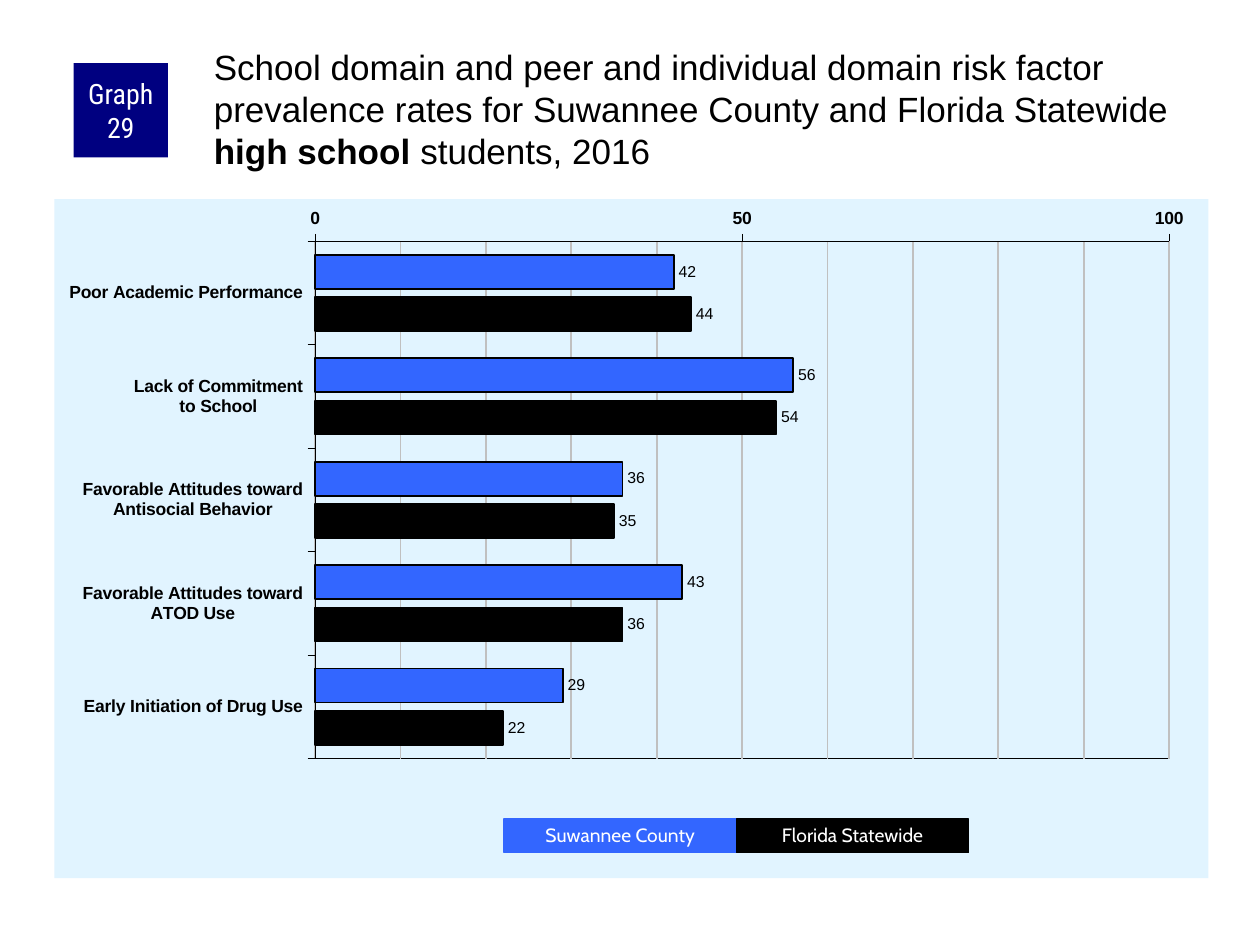
from copy import deepcopy
from lxml import etree
from pptx import Presentation
from pptx.chart.data import CategoryChartData as Data
from pptx.dml.color import RGBColor as RGB
from pptx.enum.chart import XL_AXIS_CROSSES as Cross
from pptx.enum.chart import XL_CHART_TYPE as Kind
from pptx.enum.chart import XL_LABEL_POSITION as Spot
from pptx.enum.chart import XL_TICK_LABEL_POSITION as Place
from pptx.enum.chart import XL_TICK_MARK as Tick
from pptx.enum.shapes import MSO_SHAPE as Form
from pptx.enum.text import MSO_ANCHOR as Anchor
from pptx.enum.text import PP_ALIGN as Align
from pptx.oxml import parse_xml
from pptx.oxml.ns import qn
from pptx.util import Pt

BLUE, BLACK, WHITE, NAVY = "3366FF", "000000", "FFFFFF", "000080"
PALE, GREY = "E1F4FF", "C0C0C0"
NS = ('xmlns:c="http://schemas.openxmlformats.org/drawingml/2006/chart" '
      'xmlns:a="http://schemas.openxmlformats.org/drawingml/2006/main"')

CATS = ["Poor Academic Performance", "Lack of Commitment\nto School",
        "Favorable Attitudes toward\nAntisocial Behavior",
        "Favorable Attitudes toward\nATOD Use", "Early Initiation of Drug Use"]
ROWS = [("Suwannee County", BLUE, [42, 56, 36, 43, 29]),
        ("Florida Statewide", BLACK, [44, 54, 35, 36, 22])]
TITLE = [("School domain and peer and individual domain risk factor prevalence "
          "rates for Suwannee County and Florida Statewide ", False),
         ("high school", True), (" students, 2016", False)]


def paint(fill, color):
    fill.solid()
    fill.fore_color.rgb = RGB.from_string(color)


def stroke(line, color, width):
    paint(line.fill, color)
    line.width = Pt(width)


def style(font, size, color, name="Arial", bold=False):
    font.size, font.name, font.bold = Pt(size), name, bold
    font.color.rgb = RGB.from_string(color)


def add_box(slide, text, area, color, size, face):
    box = slide.shapes.add_shape(Form.RECTANGLE, *map(Pt, area))
    box.shadow.inherit = False
    paint(box.fill, color)
    box.line.fill.background()
    frame = box.text_frame
    frame.word_wrap, frame.vertical_anchor = True, Anchor.MIDDLE
    frame.text = text
    par = frame.paragraphs[0]
    par.alignment = Align.CENTER
    style(par.runs[0].font, size, WHITE, face)
    return box


def add_badge(slide):
    box = add_box(slide, "Graph 29", (42, 36, 54, 54), NAVY, 16,
                  "Roboto Condensed")
    frame = box.text_frame
    frame.margin_left = frame.margin_right = Pt(3.6)
    frame.margin_top = frame.margin_bottom = 0


def add_title(slide):
    box = slide.shapes.add_textbox(Pt(120), Pt(24), Pt(570), Pt(60))
    frame = box.text_frame
    frame.word_wrap = True
    frame.margin_left = frame.margin_top = Pt(2.2)
    frame.margin_right = frame.margin_bottom = 0
    par = frame.paragraphs[0]
    par.line_spacing = Pt(24)
    for text, bold in TITLE:
        run = par.add_run()
        run.text = text
        style(run.font, 20, BLACK, bold=bold)


def add_key(slide):
    wide = 132.8
    for i, (name, color, _) in enumerate(ROWS):
        box = add_box(slide, name, (288 + i * wide, 468, wide, 19.2),
                      color, 11, "Cabin")
        stroke(box.line, color, 0.75)
        box.text_frame.paragraphs[0].line_spacing = 0.9


def set_axis(axis):
    style(axis.tick_labels.font, 10, BLACK, bold=True)
    axis.major_tick_mark, axis.minor_tick_mark = Tick.OUTSIDE, Tick.NONE
    axis.tick_label_position = Place.NEXT_TO_AXIS
    stroke(axis.format.line, BLACK, 0.25)


def set_grid(chart):
    """Scale the value axis and give both grids the same line."""
    axis = chart.value_axis
    axis.minimum_scale, axis.maximum_scale = 0, 100
    axis.major_unit, axis.minor_unit = 50, 10
    axis.has_major_gridlines = axis.has_minor_gridlines = True
    stroke(axis.major_gridlines.format.line, GREY, 1)
    root = chart.element
    look = root.find(f".//{qn('c:majorGridlines')}/{qn('c:spPr')}")
    root.find(".//" + qn("c:minorGridlines")).append(deepcopy(look))


def set_frame(chart):
    """Fill the chart area, and place and outline the inner plot."""
    root = chart.element
    root.find(qn("c:chart")).addnext(parse_xml(
        f'<c:spPr {NS}><a:solidFill><a:srgbClr val="{PALE}"/></a:solidFill>'
        '<a:ln><a:noFill/></a:ln></c:spPr>'))
    plot = root.find(".//" + qn("c:plotArea"))
    for old in plot.findall(qn("c:layout")):
        plot.remove(old)
    area = parse_xml(f'<c:layout {NS}><c:manualLayout/></c:layout>')
    parts = [("layoutTarget", "inner"), ("xMode", "edge"), ("yMode", "edge"),
             ("x", "0.226"), ("y", "0.062"), ("w", "0.74"), ("h", "0.762")]
    for tag, val in parts:
        etree.SubElement(area[0], qn("c:" + tag)).set("val", val)
    plot.insert(0, area)
    plot.append(parse_xml(
        f'<c:spPr {NS}><a:noFill/><a:ln w="3175"><a:solidFill>'
        f'<a:srgbClr val="{BLACK}"/></a:solidFill></a:ln></c:spPr>'))


def add_bars(slide):
    data = Data()
    data.categories = CATS
    for name, _, vals in ROWS:
        data.add_series(name, vals)
    chart = slide.shapes.add_chart(Kind.BAR_CLUSTERED, Pt(31), Pt(113.8),
                                   Pt(659.5), Pt(388), data).chart
    chart.has_legend = chart.has_title = False
    style(chart.font, 11.8, BLACK)
    plot = chart.plots[0]
    plot.gap_width, plot.overlap, plot.vary_by_categories = 80, -25, False
    for row, (_, color, _) in zip(plot.series, ROWS):
        paint(row.format.fill, color)
        stroke(row.format.line, BLACK, 1)
        row.invert_if_negative = False
        tags = row.data_labels
        tags.show_value, tags.position = True, Spot.OUTSIDE_END
        style(tags.font, 9, BLACK)
    cat = chart.category_axis
    set_axis(cat)
    set_axis(chart.value_axis)
    set_grid(chart)
    cat.reverse_order = True
    cat.crosses = Cross.MAXIMUM
    set_frame(chart)


def main():
    deck = Presentation()
    deck.slide_width, deck.slide_height = Pt(720), Pt(540)
    slide = deck.slides.add_slide(deck.slide_layouts[6])
    add_bars(slide)
    add_badge(slide)
    add_title(slide)
    add_key(slide)
    deck.save("out.pptx")


if __name__ == "__main__":
    main()
